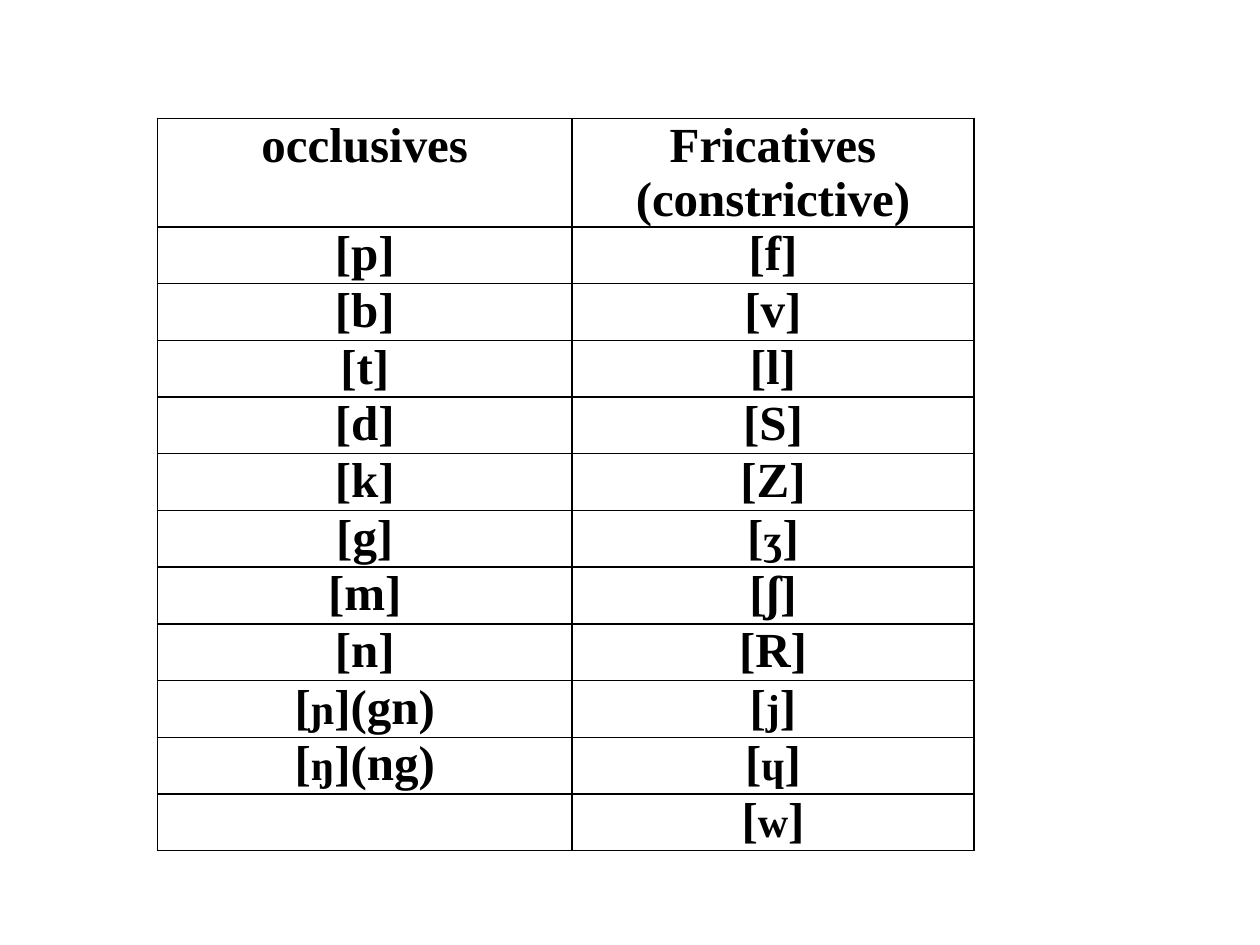
from itertools import groupby

from lxml.etree import SubElement
from pptx import Presentation
from pptx.dml.color import RGBColor
from pptx.enum.text import PP_ALIGN
from pptx.oxml.ns import qn
from pptx.util import Inches, Pt

FONT = "Times New Roman"
BLACK = "000000"
SMALL_SYMBOLS = "ʒɲŋɥjw"
COLUMN_WIDTHS = (3.29, 3.19)
HEADER_HEIGHT, ROW_HEIGHT = 0.55, 0.45
CONSONANTS = [
    ("occlusives", "Fricatives (constrictive)"),
    ("[p]", "[f]"),
    ("[b]", "[v]"),
    ("[t]", "[l]"),
    ("[d]", "[S]"),
    ("[k]", "[Z]"),
    ("[g]", "[ʒ]"),
    ("[m]", "[ʃ]"),
    ("[n]", "[R]"),
    ("[ɲ](gn)", "[j]"),
    ("[ŋ](ng)", "[ɥ]"),
    ("", "[w]"),
]


def color(hex_string):
    """Turn a hex string into a colour."""
    return RGBColor.from_string(hex_string)


def add_borders(cell, hex_string, width):
    """Draw a solid line on all four sides of a cell."""
    tcPr = cell._tc.get_or_add_tcPr()
    for side in ("a:lnL", "a:lnR", "a:lnT", "a:lnB"):
        ln = SubElement(tcPr, qn(side), w=str(Pt(width)))
        fill = SubElement(ln, qn("a:solidFill"))
        SubElement(fill, qn("a:srgbClr"), val=hex_string)


def add_runs(p, text):
    """Write text in bold, with the small phonetic symbols in their own runs."""
    for small, chars in groupby(text, lambda char: char in SMALL_SYMBOLS):
        r = p.add_run()
        r.text = "".join(chars)
        r.font.name = FONT
        r.font.size = Pt(24 if small else 28)
        r.font.bold = True
        r.font.color.rgb = color(BLACK)


def format_cell(cell, text):
    """Set the margins, borders, fill and centred text of a cell."""
    cell.margin_left = cell.margin_right = Inches(0.07)
    cell.margin_top = cell.margin_bottom = 0
    add_borders(cell, BLACK, 1)
    cell.fill.background()
    p = cell.text_frame.paragraphs[0]
    p.alignment = PP_ALIGN.CENTER
    add_runs(p, text)


def add_consonant_table(s, rows, left, top):
    """Add the two-column table of consonants."""
    heights = [HEADER_HEIGHT] + [ROW_HEIGHT] * (len(rows) - 1)
    table = s.shapes.add_table(
        len(rows), len(COLUMN_WIDTHS), Inches(left), Inches(top),
        Inches(sum(COLUMN_WIDTHS)), Inches(sum(heights))).table
    table.first_row = table.horz_banding = False
    for column, width in zip(table.columns, COLUMN_WIDTHS):
        column.width = Inches(width)
    for row, height, texts in zip(table.rows, heights, rows):
        row.height = Inches(height)
        for cell, text in zip(row.cells, texts):
            format_cell(cell, text)


def main():
    """Build and save the slide."""
    prs = Presentation()
    prs.slide_width, prs.slide_height = Inches(10), Inches(7.5)
    s = prs.slides.add_slide(prs.slide_layouts[6])
    add_consonant_table(s, CONSONANTS, 1.25, 0.94)
    prs.save("out.pptx")


if __name__ == "__main__":
    main()
